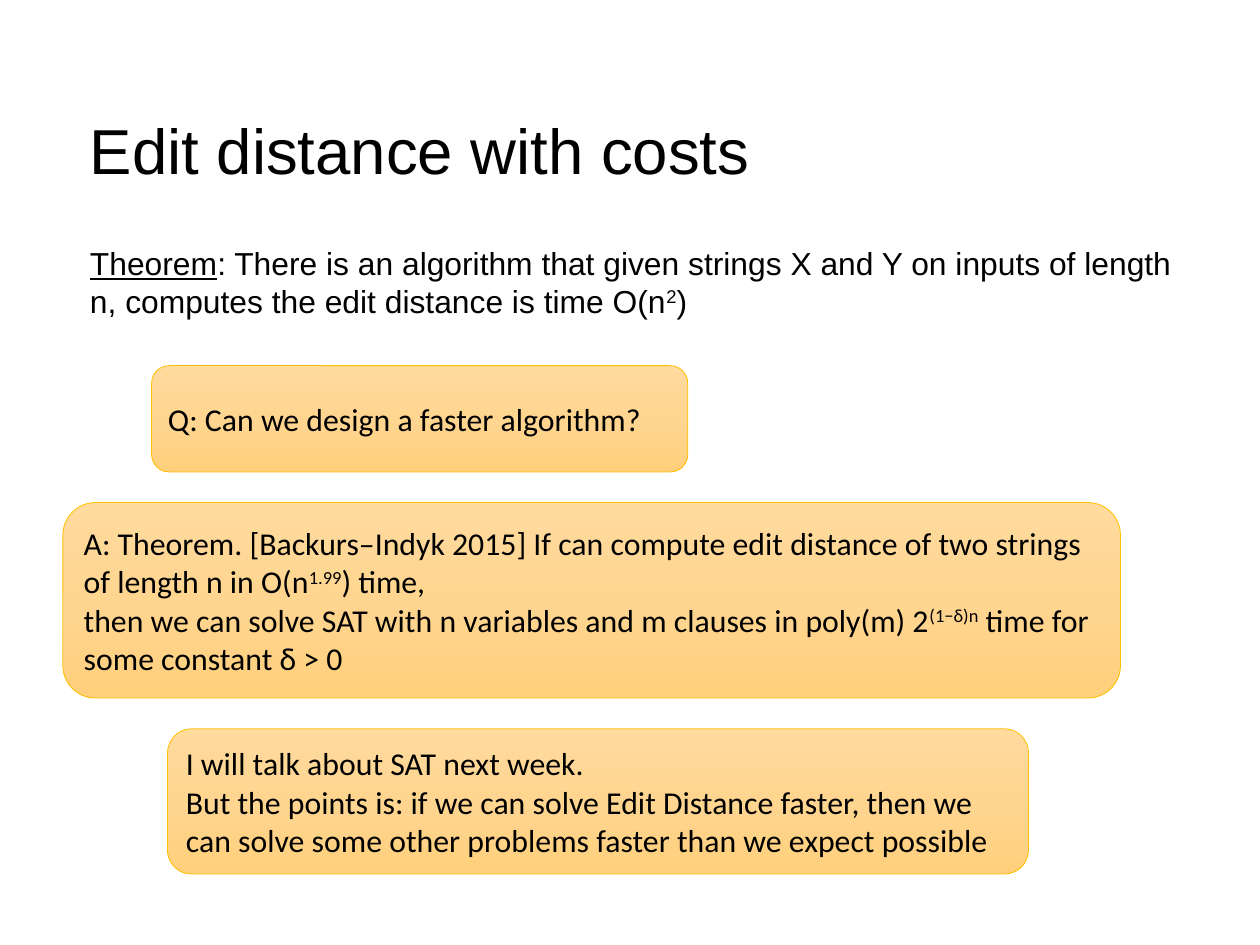
"""Build the slide on edit distance with costs."""
import copy
from dataclasses import dataclass

import pptx
import pptx.dml.color
import pptx.enum.shapes
import pptx.enum.text
import pptx.oxml.ns
import pptx.util

W, H = pptx.util.Cm(28), pptx.util.Cm(21)
COLORS = {"text": "000000", "border": "FFC000",
          "top": "FFDB9E", "middle": "FFD590", "bottom": "FFD07C"}
STOPS = [(0, "top"), (0.5, "middle"), (1, "bottom")]


@dataclass(frozen=True)
class Run:
    """A piece of text with its own style."""
    text: str
    sup: bool = False
    underline: bool = False


@dataclass(frozen=True)
class Area:
    """A rectangle in percent of the slide's width and height."""
    x: float
    y: float
    w: float
    h: float

    def emu(self) -> list[pptx.util.Emu]:
        """Return left, top, width and height as lengths."""
        shares = ((self.x, W), (self.y, H), (self.w, W), (self.h, H))
        return [pptx.util.Emu(round(share * full / 100)) for share, full in shares]


@dataclass(frozen=True)
class Block:
    """A text block, drawn as a rounded card or as plain text."""
    area: Area
    paragraphs: list[list[Run]]
    card: bool = True
    size: int = 20
    middle: bool = True
    after: float = 0


BLOCKS = [
    Block(Area(7.14, 9.03, 83.94, 13.54), [[Run("Edit distance with costs")]],
          card=False, size=40),
    Block(Area(7.14, 25.76, 87.84, 66.75), [[
        Run("Theorem", underline=True),
        Run(": There is an algorithm that given strings X and Y on inputs of length n, "
            "computes the edit distance is time O(n"),
        Run("2", sup=True), Run(")")]], card=False, middle=False, after=14.2),
    Block(Area(12.03, 38.69, 42.56, 11.25), [[Run("Q: Can we design a faster algorithm?")]]),
    Block(Area(4.99, 53.18, 83.94, 20.68), [
        [Run("A: Theorem. [Backurs–Indyk 2015] If can compute edit distance of "
             "two strings of length n in O(n"),
         Run("1.99", sup=True), Run(") time,")],
        [Run("then we can solve SAT with n variables and m clauses in poly(m) 2"),
         Run("(1−δ)n", sup=True), Run(" time for some constant δ > 0")]]),
    Block(Area(13.3, 77.13, 68.33, 15.36), [
        [Run("I will talk about SAT next week.")],
        [Run("But the points is: if we can solve Edit Distance faster, then we can solve "
             "some other problems faster than we expect possible")]]),
]


def rgb(name: str) -> pptx.dml.color.RGBColor:
    """Look up a named colour."""
    return pptx.dml.color.RGBColor.from_string(COLORS[name])


def add_card(slide, area: Area):
    """Add a rounded card with a vertical gradient."""
    sp = slide.shapes.add_shape(pptx.enum.shapes.MSO_SHAPE.ROUNDED_RECTANGLE, *area.emu())
    sp.shadow.inherit = False
    sp.line.color.rgb = rgb("border")
    sp.line.width = pptx.util.Pt(0.5)
    sp.fill.gradient()
    sp.fill.gradient_angle = 270
    first = sp._element.spPr.find(".//" + pptx.oxml.ns.qn("a:gs"))
    first.addnext(copy.deepcopy(first))
    for stop, (position, name) in zip(sp.fill.gradient_stops, STOPS):
        stop.position = position
        stop.color.rgb = rgb(name)
    return sp


def add_text_area(slide, area: Area):
    """Add a text box without margins."""
    sp = slide.shapes.add_textbox(*area.emu())
    tf = sp.text_frame
    tf.margin_left = tf.margin_right = tf.margin_top = tf.margin_bottom = 0
    return sp


def add_block(slide, block: Block) -> None:
    """Draw a block and write its text run by run."""
    sp = (add_card if block.card else add_text_area)(slide, block.area)
    tf = sp.text_frame
    tf.word_wrap = True
    anchor = pptx.enum.text.MSO_ANCHOR
    tf.vertical_anchor = anchor.MIDDLE if block.middle else anchor.TOP
    for i, runs in enumerate(block.paragraphs):
        p = tf.add_paragraph() if i else tf.paragraphs[0]
        p.alignment = pptx.enum.text.PP_ALIGN.LEFT
        p.space_after = pptx.util.Pt(block.after)
        for run in runs:
            r = p.add_run()
            r.text = run.text
            r.font.name = "Calibri" if block.card else "Arial"
            r.font.size = pptx.util.Pt(block.size)
            r.font.color.rgb = rgb("text")
            if run.underline:
                r.font.underline = True
            if run.sup:
                r.font._element.set("baseline", "30000")


def main() -> None:
    """Build and save the slide."""
    prs = pptx.Presentation()
    prs.slide_width = W
    prs.slide_height = H
    slide = prs.slides.add_slide(prs.slide_layouts[6])
    for block in BLOCKS:
        add_block(slide, block)
    prs.save("out.pptx")


if __name__ == "__main__":
    main()
